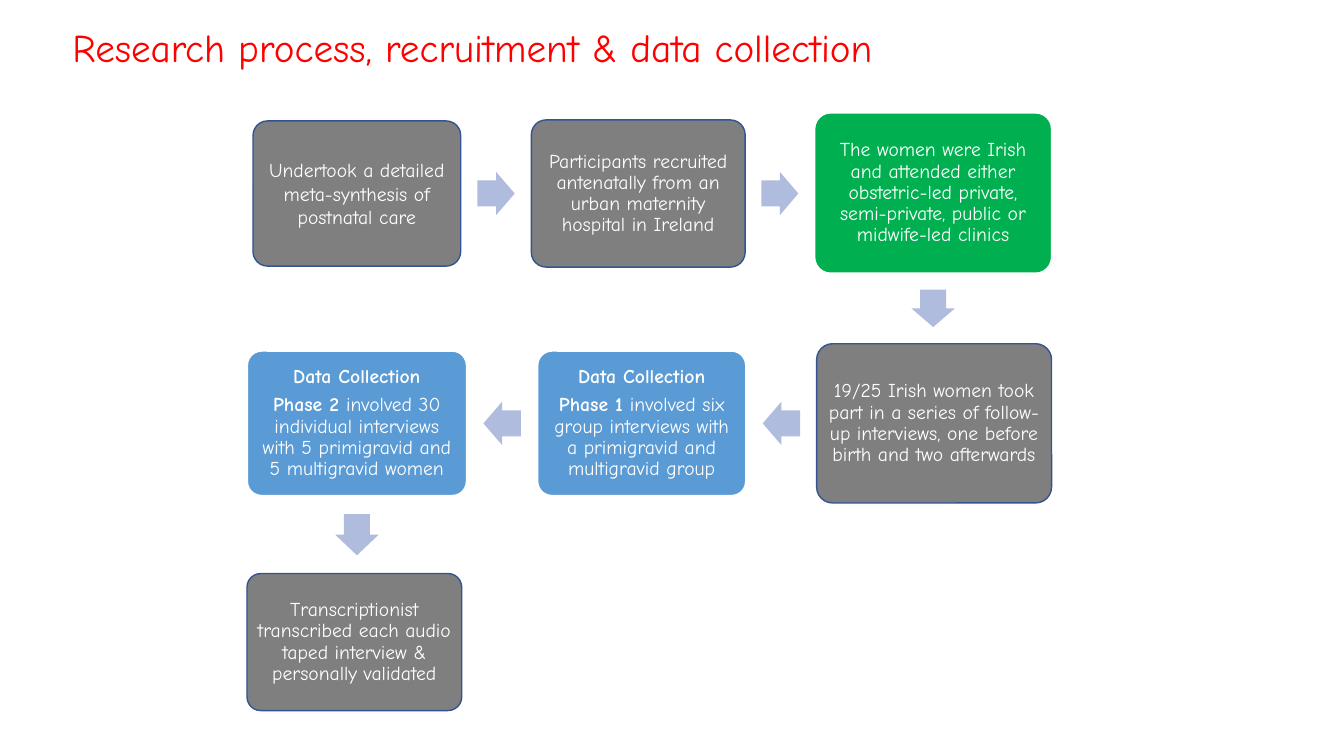
from dataclasses import dataclass
from pptx import Presentation
from pptx.dml.color import RGBColor
from pptx.enum.shapes import MSO_SHAPE
from pptx.enum.text import MSO_ANCHOR, PP_ALIGN
from pptx.util import Inches, Pt


@dataclass(frozen=True)
class Theme:
    font: str = "Comic Neue"
    title: int = 28
    body: int = 14
    red: str = "FF0000"
    white: str = "FFFFFF"
    gray: str = "7F7F7F"
    green: str = "00B050"
    blue: str = "5B9BD5"
    navy: str = "325491"
    arrow: str = "B0BCDE"


@dataclass(frozen=True)
class Box:
    left: float
    top: float
    width: float
    height: float

    def inner(self, left, top, width, height):
        return Box(self.left + left, self.top + top, width, height)

    def lengths(self):
        return [Inches(v) for v in (self.left, self.top, self.width, self.height)]


THEME = Theme()

GRAY = (THEME.gray, THEME.navy, 1)
GREEN = (THEME.green, THEME.white, 1)
BLUE = (THEME.blue, THEME.white, 1.5)

STEPS = [
    ((0.06, 0.08, 2.06, 1.44), GRAY, 1.0,
     [[("Undertook a detailed", False)],
      [("meta-synthesis of postnatal care", False)]]),
    ((2.82, 0.07, 2.12, 1.46), GRAY, 0.9,
     [[("Participants recruited antenatally from an urban maternity "
        "hospital in Ireland", False)]]),
    ((5.63, 0, 2.35, 1.59), GREEN, 0.9,
     [[("The women were Irish and attended either obstetric-led private, "
        "semi-private, public or midwife-led clinics", False)]]),
    ((5.65, 2.29, 2.33, 1.58), GRAY, 0.9,
     [[("19/25 Irish women took part in a series of follow-up interviews, "
        "one before birth and two afterwards", False)]]),
    ((2.88, 2.36, 2.07, 1.44), BLUE, 0.9,
     [[("Data Collection", True)],
      [("Phase 1 ", True),
       ("involved six group interviews with a primigravid and "
        "multigravid group", False)]]),
    ((0, 2.36, 2.18, 1.44), BLUE, 0.9,
     [[("Data Collection", True)],
      [("Phase 2 ", True),
       ("involved 30 individual interviews with 5 primigravid and "
        "5 multigravid women", False)]]),
    ((0, 4.57, 2.13, 1.36), GRAY, 0.9,
     [[("Transcriptionist transcribed each audio taped interview & "
        "personally validated", False)]]),
]


def style(run, size, color, bold=False):
    font = run.font
    font.name = THEME.font
    font.size = Pt(size)
    font.bold = bold
    font.color.rgb = RGBColor.from_string(color)


def paint(shape, fill):
    shape.shadow.inherit = False
    shape.fill.solid()
    shape.fill.fore_color.rgb = RGBColor.from_string(fill)


def add_title(slide, box, text):
    frame = slide.shapes.add_textbox(*box.lengths()).text_frame
    frame.word_wrap = True
    frame.text = text
    para = frame.paragraphs[0]
    para.line_spacing = 0.9
    style(para.runs[0], THEME.title, THEME.red)


def add_step(slide, box, look, spacing, paras):
    fill, edge, weight = look
    card = slide.shapes.add_shape(MSO_SHAPE.ROUNDED_RECTANGLE, *box.lengths())
    card.adjustments[0] = 0.1
    paint(card, fill)
    card.line.color.rgb = RGBColor.from_string(edge)
    card.line.width = Pt(weight)
    frame = card.text_frame
    frame.word_wrap = True
    frame.vertical_anchor = MSO_ANCHOR.MIDDLE
    frame.margin_left = frame.margin_right = Inches(0.06)
    frame.margin_top = frame.margin_bottom = Inches(0.06)
    for i, parts in enumerate(paras):
        para = frame.add_paragraph() if i else frame.paragraphs[0]
        para.alignment = PP_ALIGN.CENTER
        para.line_spacing = spacing
        para.space_after = Pt(5 if spacing < 1 else 0)
        for text, bold in parts:
            run = para.add_run()
            run.text = text
            style(run, THEME.body, THEME.white, bold)


def add_arrow(slide, start, end):
    if end.top > start.top + start.height:
        turn, near, far = 90, start.top + start.height, end.top
    elif end.left > start.left:
        turn, near, far = 0, start.left + start.width, end.left
    else:
        turn, near, far = 180, end.left + end.width, start.left
    middle = (near + far) / 2
    x = start.left + start.width / 2 if turn == 90 else middle
    y = middle if turn == 90 else start.top + start.height / 2
    length, thick = 0.53 * (far - near), 0.43
    box = Box(x - length / 2, y - thick / 2, length, thick)
    arrow = slide.shapes.add_shape(MSO_SHAPE.RIGHT_ARROW, *box.lengths())
    arrow.adjustments[0] = 0.6
    arrow.adjustments[1] = 0.5
    arrow.rotation = turn
    paint(arrow, THEME.arrow)
    arrow.line.fill.background()


def add_flow(slide, area, steps):
    boxes = [area.inner(*place) for place, *_ in steps]
    for box, (_, look, spacing, paras) in zip(boxes, steps):
        add_step(slide, box, look, spacing, paras)
    for start, end in zip(boxes, boxes[1:]):
        add_arrow(slide, start, end)


def main():
    deck = Presentation()
    deck.slide_width = Inches(13.33)
    deck.slide_height = Inches(7.5)
    slide = deck.slides.add_slide(deck.slide_layouts[6])
    add_flow(slide, Box(2.45, 1.12, 7.98, 5.93), STEPS)
    add_title(slide, Box(0.62, 0.23, 11.02, 1.22),
              "Research process, recruitment & data collection")
    deck.save("out.pptx")


if __name__ == "__main__":
    main()
